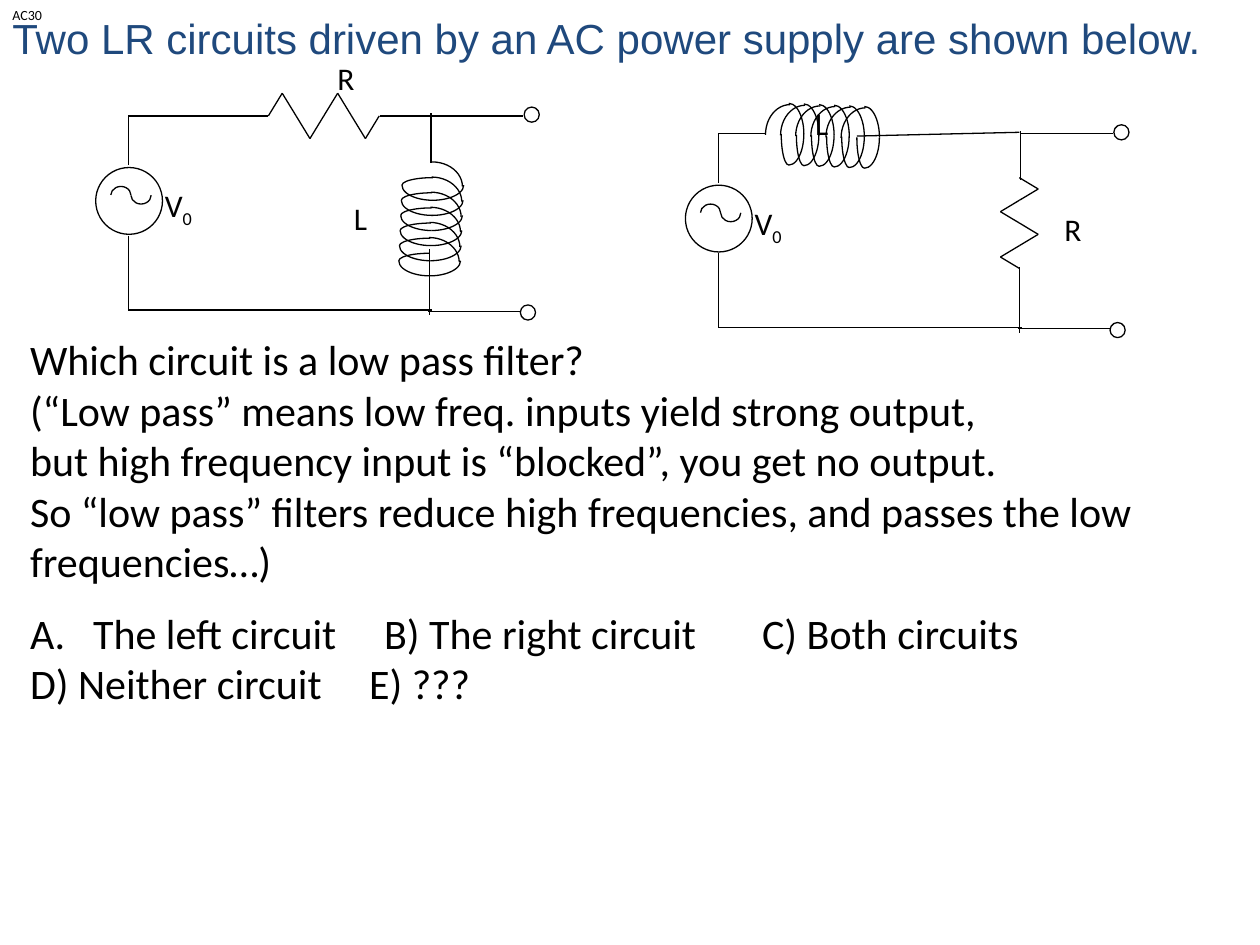
from dataclasses import dataclass

from lxml import etree
from pptx import Presentation
from pptx import util as u
from pptx.dml.color import RGBColor
from pptx.enum import shapes, text
from pptx.oxml import ns

TITLE = "Two LR circuits driven by an AC power supply are shown below."
TAG = "AC30"
QUESTION = [
    "Which circuit is a low pass filter?",
    "(“Low pass” means low freq. inputs yield strong output,\v"
    "but high frequency input is “blocked”, you get no output.\v"
    "So “low pass” filters reduce high frequencies, and passes the low frequencies…)",
]
ANSWERS = [
    ("The left circuit\tB) The right circuit\tC) Both circuits", (2.81, 5.81)),
    ("D) Neither circuit\tE) ???", (2.69,)),
]
SHARED_WIRES = [
    ((0, 0), (0, 0.39)), ((0, 0.95), (0, 1.54)), ((2.41, 1.54), (0, 1.54)),
    ((2.4, -0.02), (2.4, 0.37)), ((2.39, 1.06), (2.39, 1.58)),
    ((2.4, 0), (3.13, 0)), ((2.38, 1.55), (3.11, 1.55)),
]
TERMINALS = [(3.14, -0.07), (3.11, 1.5)]
CIRCUITS = [
    dict(origin=(1.02, 0.92),
         wires=[((0.73, 0), (0, 0)), ((1.11, 0), (0.73, 0)), ((2.39, 0), (2, 0))],
         resistor=((1.11, 0), (0.11, 0), (0, -0.18)),
         coil=((2.41, 0.56), 0),
         labels=[("R", 1.56, -0.5, 0.36), ("L", 1.69, 0.61, 0.31)]),
    dict(origin=(5.7, 1.06),
         wires=[((0.38, 0), (0, 0)), ((2.39, -0.01), (1.1, 0.02))],
         resistor=((2.39, 0.35), (0, 0.09), (0.15, 0)),
         coil=((0.57, 0.01), 270),
         labels=[("R", 2.65, 0.56, 0.36), ("L", 0.67, -0.28, 0.31)]),
]
TURNS, SEGMENTS = 6, 8
TURN_STEP = (-0.005, 0.12)
TURN_ARCS = [
    ((0, 0), (0.48, 0.39), ""),
    ((0.005, -0.01), (0.49, 0.24), "V"),
    ((0.005, -0.01), (0.49, 0.24), "HV"),
    ((0.005, -0.01), (0.49, 0.12), "H"),
]


@dataclass(frozen=True)
class Theme:
    ink: RGBColor = RGBColor(0, 0, 0)
    title: RGBColor = RGBColor(0x1F, 0x49, 0x7D)
    heading: str = "Arial"
    body: str = "Calibri"
    large: int = 24
    label: int = 18
    small: int = 8
    line: float = 0.75


T = Theme()


def add_wire(s, start, end):
    ends = [u.Inches(v) for v in (*start, *end)]
    c = s.add_connector(shapes.MSO_CONNECTOR.STRAIGHT, *ends)
    c.line.color.rgb = T.ink
    c.line.width = u.Pt(T.line)
    etree.SubElement(c._element.spPr, ns.qn("a:effectLst"))


def add_outline(s, kind, x, y, w, h, flip="", rotation=0):
    sp = s.add_shape(kind, *(u.Inches(v) for v in (x, y, w, h)))
    sp.fill.background()
    sp.line.color.rgb = T.ink
    sp.line.width = u.Pt(T.line)
    sp.shadow.inherit = False
    sp.rotation = rotation
    for axis in flip:
        sp._element.spPr.xfrm.set("flip" + axis, "1")
    return sp


def add_text(s, x, y, w, h, lines, size, color=T.ink, font=T.body, wrap=True):
    tf = s.add_textbox(*(u.Inches(v) for v in (x, y, w, h))).text_frame
    tf.word_wrap = wrap
    for i, line in enumerate(lines):
        p = tf.paragraphs[0] if i == 0 else tf.add_paragraph()
        p.text = line
        p.font.size = u.Pt(size)
        p.font.name = font
        p.font.color.rgb = color
    return tf


def add_resistor(s, start, step, swing):
    points = []
    for i in range(SEGMENTS + 1):
        side = (0, 1, 0, -1)[i % 4]
        points.append([a + i * b + side * c for a, b, c in zip(start, step, swing)])
    g = s.add_group_shape().shapes
    for a, b in zip(points, points[1:]):
        add_wire(g, a, b)


def add_coil(s, center, rotation):
    g = s.add_group_shape().shapes
    for i in range(TURNS):
        for offset, (w, h), flip in TURN_ARCS:
            dx, dy = (o + i * d for o, d in zip(offset, TURN_STEP))
            if rotation == 270:
                dx, dy = dy, -dx
            x, y = center[0] + dx - w / 2, center[1] + dy - h / 2
            add_outline(g, shapes.MSO_SHAPE.ARC, x, y, w, h, flip, rotation)


def add_supply(s, x, y):
    add_outline(s, shapes.MSO_SHAPE.OVAL, x - 0.26, y + 0.41, 0.53, 0.53)
    g = s.add_group_shape().shapes
    for dx, flip in ((-0.14, ""), (0.02, "V")):
        sp = add_outline(g, shapes.MSO_SHAPE.ARC, x + dx, y + 0.56, 0.16, 0.14, flip)
        sp.adjustments[0], sp.adjustments[1] = 109.01, 0
    tf = add_text(s, x + 0.19, y + 0.51, 0.48, 0.4, ["V"], T.label, wrap=False)
    r = tf.paragraphs[0].add_run()
    r.text = "0"
    r.font._element.set("baseline", "-25000")


def add_circuit(s, origin, wires, resistor, coil, labels):
    def place(point):
        return [a + b for a, b in zip(origin, point)]

    for a, b in SHARED_WIRES + wires:
        add_wire(s, place(a), place(b))
    start, step, swing = resistor
    add_resistor(s, place(start), step, swing)
    add_coil(s, place(coil[0]), coil[1])
    add_supply(s, *origin)
    g = s.add_group_shape().shapes
    for point in TERMINALS:
        add_outline(g, shapes.MSO_SHAPE.OVAL, *place(point), 0.12, 0.12)
    for name, x, y, w in labels:
        add_text(s, *place((x, y)), w, 0.37, [name], T.label, wrap=False)


def add_answers(s):
    tf = add_text(s, 0.14, 4.77, 9.42, 0.91, [a for a, _ in ANSWERS], T.large)
    for i, (p, (_, stops)) in enumerate(zip(tf.paragraphs, ANSWERS)):
        pPr = p._p.get_or_add_pPr()
        tabs = etree.Element(ns.qn("a:tabLst"))
        for stop in stops:
            etree.SubElement(tabs, ns.qn("a:tab"), pos=str(u.Inches(stop)), algn="l")
        pPr.insert(0, tabs)
        if i == 0:
            pPr.set("marL", str(u.Inches(0.5)))
            pPr.set("indent", str(u.Inches(-0.5)))
            pPr.insert(0, etree.Element(ns.qn("a:buAutoNum"), type="alphaUcPeriod"))


def main():
    prs = Presentation()
    prs.slide_width, prs.slide_height = u.Inches(10), u.Inches(7.5)
    s = prs.slides.add_slide(prs.slide_layouts[6]).shapes
    for circuit in CIRCUITS:
        add_circuit(s, **circuit)
    tf = add_text(s, 0, 0.03, 10, 0.54, [TITLE], T.large, T.title, T.heading)
    tf.vertical_anchor = text.MSO_ANCHOR.MIDDLE
    add_text(s, 0.14, 2.6, 9.03, 2.12, QUESTION, T.large)
    add_answers(s)
    add_text(s, 0, 0, 0.44, 0.24, [TAG], T.small, wrap=False)
    prs.save("out.pptx")


if __name__ == "__main__":
    main()
